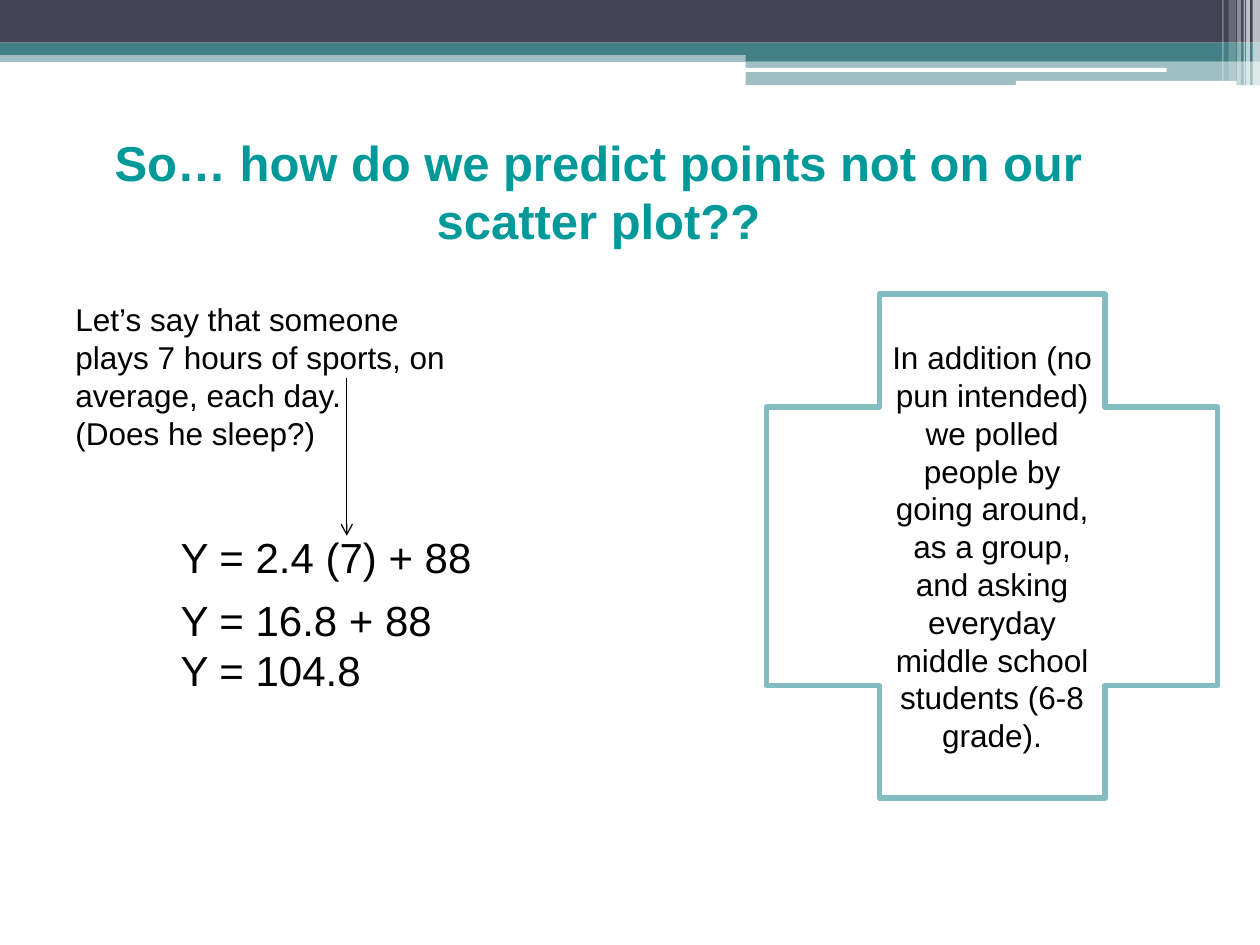
from dataclasses import dataclass

from lxml.etree import SubElement
from pptx import Presentation
from pptx.dml.color import RGBColor
from pptx.enum.shapes import MSO_CONNECTOR as Connector, MSO_SHAPE as Preset
from pptx.enum.text import MSO_ANCHOR as Anchor, MSO_AUTO_SIZE as AutoSize, PP_ALIGN as Align
from pptx.oxml.ns import qn
from pptx.util import Cm, Pt

COLORS = {
    "navy": "424456",
    "teal": "438086",
    "pale teal": "83BCC1",
    "title": "009999",
    "white": "FFFFFF",
    "black": "000000",
}
FONT = "Arial"


@dataclass(frozen=True)
class Frame:
    """Position and size in centimetres."""
    left: float
    top: float
    width: float
    height: float

    def lengths(self) -> tuple:
        return Cm(self.left), Cm(self.top), Cm(self.width), Cm(self.height)


@dataclass(frozen=True)
class Band:
    frame: Frame
    color: str
    opacity: int = 100
    rounded: bool = False


@dataclass(frozen=True)
class Stripe:
    left: float
    width: float
    height: float
    opacity: int


BANDS = [
    Band(Frame(0, 1.02, 25.4, 0.23), "teal", 50),
    Band(Frame(0, 0, 25.4, 0.86), "navy"),
    Band(Frame(0, 0.86, 25.4, 0.25), "teal"),
    Band(Frame(15.03, 0.99, 10.37, 0.24), "teal"),
    Band(Frame(15.03, 1.23, 10.37, 0.49), "teal", 50),
    Band(Frame(15.01, 1.37, 8.51, 0.08), "white", rounded=True),
    Band(Frame(20.48, 1.63, 4.45, 0.1), "white", rounded=True),
]
STRIPES = [
    Stripe(25.25, 0.15, 1.72, 65),
    Stripe(25.12, 0.08, 1.72, 65),
    Stripe(25.07, 0.03, 1.72, 60),
    Stripe(24.94, 0.08, 1.72, 40),
    Stripe(24.77, 0.15, 1.63, 20),
    Stripe(24.64, 0.03, 1.63, 30),
]


def rgb(name: str) -> RGBColor:
    return RGBColor.from_string(COLORS[name])


def add_preset(shapes, preset, frame: Frame, color: str):
    shape = shapes.add_shape(preset, *frame.lengths())
    shape.shadow.inherit = False
    shape.fill.solid()
    shape.fill.fore_color.rgb = rgb(color)
    shape.line.fill.background()
    return shape


def draw_band(shapes, band: Band) -> None:
    preset = Preset.ROUNDED_RECTANGLE if band.rounded else Preset.RECTANGLE
    shape = add_preset(shapes, preset, band.frame, band.color)
    if band.opacity < 100:
        color = shape.fill._xPr.find(".//" + qn("a:srgbClr"))
        SubElement(color, qn("a:alpha"), val=str(band.opacity * 1000))


def write_text(shape, *lines: str, size: int, color: str = "black", bold: bool = False,
               align=Align.LEFT, anchor=Anchor.TOP) -> None:
    """Fill the shape with one paragraph per line, all in one format."""
    text = shape.text_frame
    text.word_wrap = True
    text.vertical_anchor = anchor
    for index, line in enumerate(lines):
        para = text.add_paragraph() if index else text.paragraphs[0]
        para.alignment = align
        span = para.add_run()
        span.text = line
        span.font.name = FONT
        span.font.size = Pt(size)
        span.font.bold = bold
        span.font.color.rgb = rgb(color)


def add_text_box(shapes, frame: Frame, *lines: str, **text_format) -> None:
    box = shapes.add_textbox(*frame.lengths())
    write_text(box, *lines, **text_format)
    box.text_frame.auto_size = AutoSize.SHAPE_TO_FIT_TEXT


def add_down_arrow(shapes, x: float, top: float, bottom: float) -> None:
    arrow = shapes.add_connector(Connector.STRAIGHT, Cm(x), Cm(top), Cm(x), Cm(bottom))
    arrow.line.width = Pt(0.75)
    arrow.line.color.rgb = rgb("black")
    SubElement(arrow.line._get_or_add_ln(), qn("a:tailEnd"), type="arrow")
    SubElement(arrow._element.spPr, qn("a:effectLst"))


def main() -> None:
    deck = Presentation()
    deck.slide_width, deck.slide_height = Cm(25.4), Cm(19.05)
    page = deck.slides.add_slide(deck.slide_layouts[6])
    page.background.fill.solid()
    page.background.fill.fore_color.rgb = rgb("white")
    shapes = page.shapes

    for band in BANDS:
        draw_band(shapes, band)
    for stripe in STRIPES:
        frame = Frame(stripe.left, 0, stripe.width, stripe.height)
        draw_band(shapes, Band(frame, "white", stripe.opacity))

    add_text_box(shapes, Frame(1.06, 2.54, 22.01, 3.84),
                 "So… how do we predict points not on our scatter plot??",
                 size=28, color="title", bold=True, align=Align.CENTER)
    add_text_box(shapes, Frame(1.27, 5.93, 8.26, 3.33),
                 "Let’s say that someone plays 7 hours of sports, on average, each day.",
                 "(Does he sleep?)", size=18)
    add_down_arrow(shapes, 6.99, 7.62, 10.8)

    equations = shapes.add_group_shape().shapes
    add_text_box(equations, Frame(3.39, 10.58, 6.77, 1.27), "Y = 2.4 (7) + 88", size=24)
    add_text_box(equations, Frame(3.39, 11.85, 6.77, 2.31),
                 "Y = 16.8 + 88", "Y = 104.8", size=24)

    plus = add_preset(shapes, Preset.CROSS, Frame(15.45, 5.93, 9.1, 10.16), "white")
    plus.line.color.rgb = rgb("pale teal")
    plus.line.width = Pt(3)
    write_text(plus, "In addition (no pun intended) we polled people by going around, as a group, "
               "and asking everyday middle school students (6-8 grade).",
               size=18, align=Align.CENTER, anchor=Anchor.MIDDLE)

    deck.save("out.pptx")


if __name__ == "__main__":
    main()
